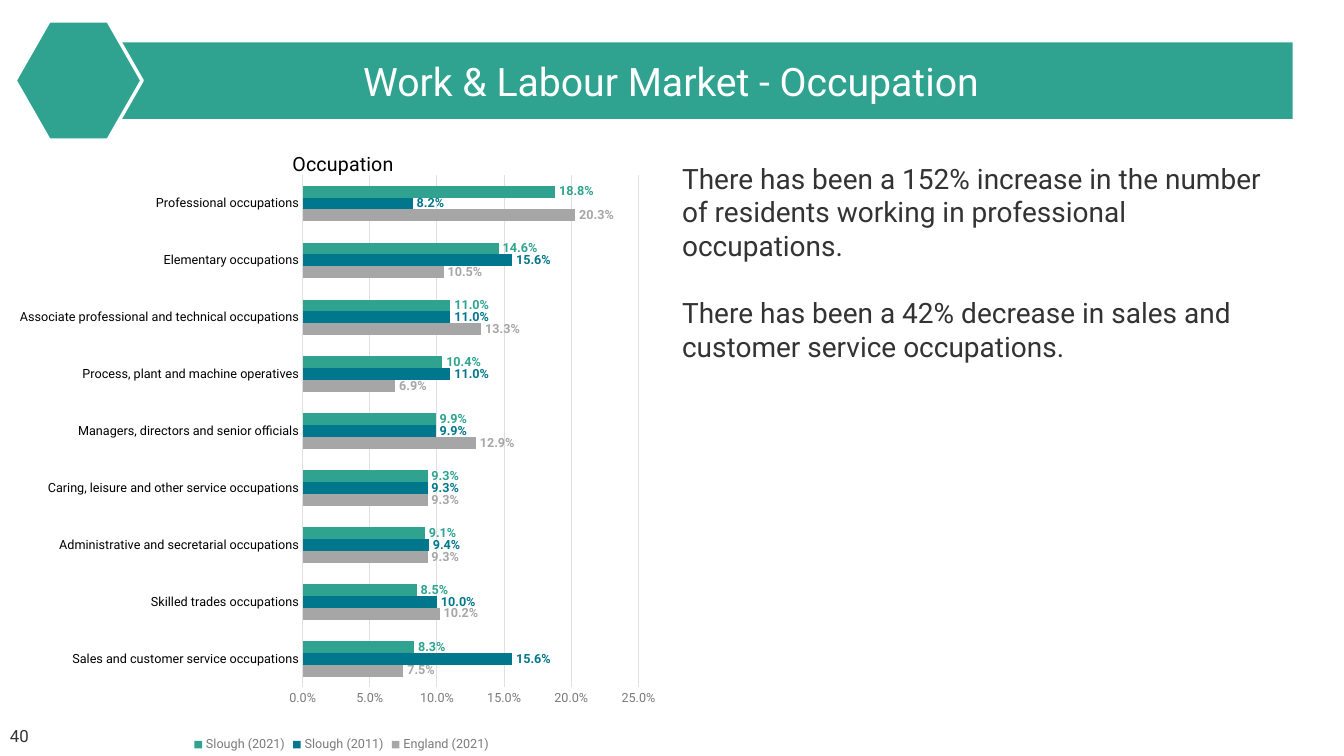
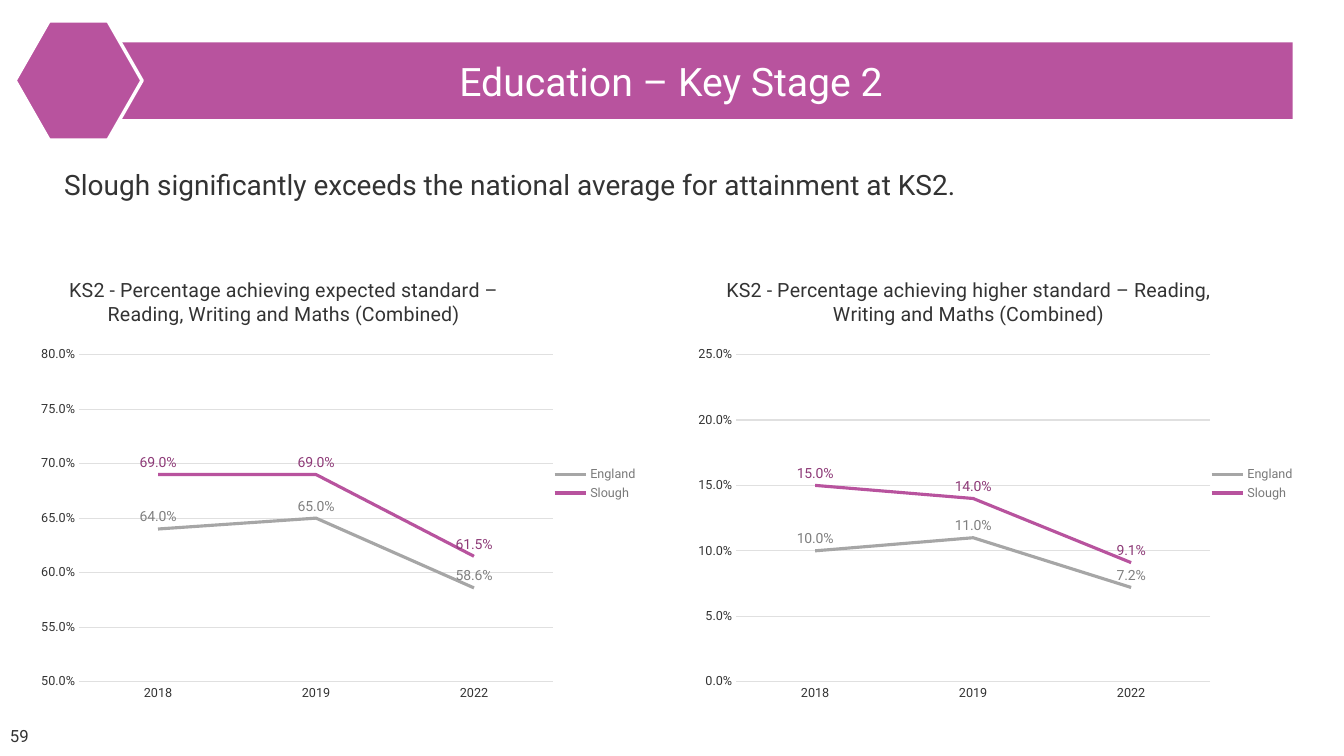
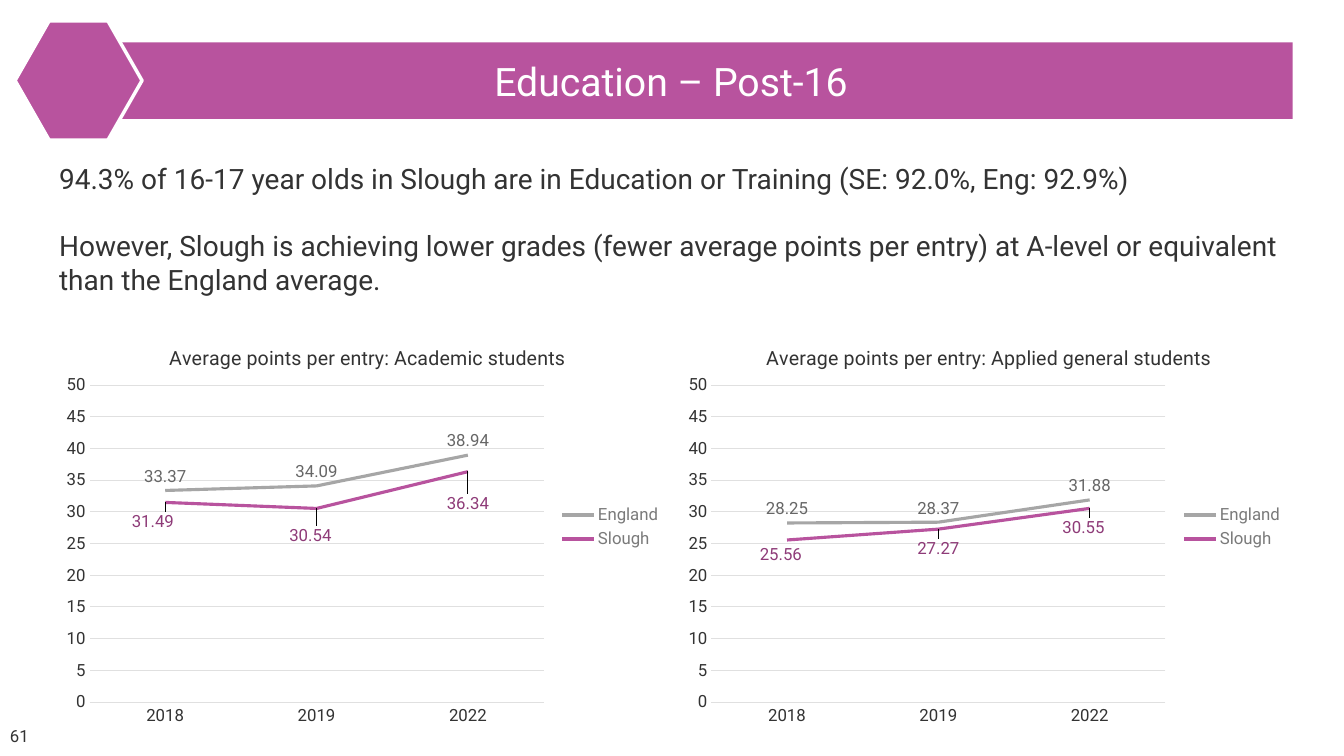
"""Build three banner slides with charts on occupation and education."""
from lxml import etree
from pptx import Presentation
from pptx.chart.data import CategoryChartData
from pptx.dml.color import RGBColor
from pptx.enum.chart import XL_CHART_TYPE, XL_LABEL_POSITION, XL_LEGEND_POSITION, XL_TICK_MARK
from pptx.enum.shapes import MSO_SHAPE
from pptx.enum.text import MSO_ANCHOR, PP_ALIGN
from pptx.oxml.ns import qn
from pptx.util import Cm, Pt

BAR, LINE = XL_CHART_TYPE.BAR_CLUSTERED, XL_CHART_TYPE.LINE
OUTSIDE, ABOVE = XL_LABEL_POSITION.OUTSIDE_END, XL_LABEL_POSITION.ABOVE
BOTTOM, RIGHT = XL_LEGEND_POSITION.BOTTOM, XL_LEGEND_POSITION.RIGHT
NO_TICK = XL_TICK_MARK.NONE
RECTANGLE, HEXAGON = MSO_SHAPE.RECTANGLE, MSO_SHAPE.HEXAGON
TOP, MIDDLE = MSO_ANCHOR.TOP, MSO_ANCHOR.MIDDLE
LEFT, CENTER = PP_ALIGN.LEFT, PP_ALIGN.CENTER

FONT = "Roboto"
COLORS = {
    "green": "2FA390", "teal": "00778C", "purple": "B8539E", "plum": "8E3B78",
    "gray": "A6A6A6", "mid": "808080", "dark": "666666", "legend": "7A7A7A",
    "grid": "E0E0E0", "text": "333333", "black": "000000", "white": "FFFFFF",
}
YEARS = ["2018", "2019", "2022"]
OCCUPATIONS = [
    "Sales and customer service occupations",
    "Skilled trades occupations",
    "Administrative and secretarial occupations",
    "Caring, leisure and other service occupations",
    "Managers, directors and senior officials",
    "Process, plant and machine operatives",
    "Associate professional and technical occupations",
    "Elementary occupations",
    "Professional occupations",
]
OCCUPATION_STYLE = {
    "kind": BAR, "categories": OCCUPATIONS, "scale": (0, 0.25, 0.05),
    "format": "0.0%", "label_format": "0.0%", "axis_size": 9, "label_size": 9,
    "axis_colors": ("black", "legend"), "title_color": "black",
    "legend": BOTTOM, "label_position": OUTSIDE, "bold": True,
    "plot": (0.441, 0.085, 0.508, 0.807),
    "colors": [("gray", "gray"), ("teal", "teal"), ("green", "green")],
}
STAGE_STYLE = {
    "kind": LINE, "categories": YEARS, "format": "0.0%", "label_format": "0.0%",
    "axis_size": 9, "label_size": 10, "axis_colors": ("text", "text"),
    "title_color": "text", "legend": RIGHT, "label_position": ABOVE, "bold": False,
    "plot": (0.101, 0.219, 0.749, 0.712), "title_at": (0.08, 0.04),
    "colors": [("gray", "mid"), ("purple", "plum")],
}
POINTS_STYLE = STAGE_STYLE | {
    "scale": (0, 50, 5), "format": "0", "label_format": "0.00",
    "axis_size": 12, "label_size": 12, "plot": (0.057, 0.158, 0.735, 0.764),
    "colors": [("gray", "dark"), ("purple", "plum")],
}
SLIDES = [
    {
        "title": "Work & Labour Market - Occupation", "color": "green", "number": "40",
        "body": [
            "There has been a 152% increase in the number of residents working in "
            "professional occupations.",
            "There has been a 42% decrease in sales and customer service occupations.",
        ],
        "body_at": (16.94, 3.94, 15.67, 4.52),
        "style": OCCUPATION_STYLE,
        "chart_lefts": [0.28], "chart_frame": (3.05, 16.66, 16),
        "charts": [{
            "title": "Occupation", "title_at": (0.42, 0.04),
            "series": {
                "England (2021)": [0.075, 0.102, 0.093, 0.093, 0.129, 0.069, 0.133, 0.105, 0.203],
                "Slough (2011)": [0.156, 0.1, 0.094, 0.093, 0.099, 0.11, 0.11, 0.156, 0.082],
                "Slough (2021)": [0.083, 0.085, 0.091, 0.093, 0.099, 0.104, 0.11, 0.146, 0.188],
            },
        }],
    },
    {
        "title": "Education – Key Stage 2", "color": "purple", "number": "59",
        "body": ["Slough significantly exceeds the national average for attainment at KS2."],
        "body_at": (1.37, 4.09, 31.24, 1.12),
        "style": STAGE_STYLE,
        "chart_lefts": [0.38, 16.94], "chart_frame": (6.4, 15.95, 11.58),
        "charts": [
            {
                "title": "KS2 - Percentage achieving expected standard – "
                         "Reading, Writing and Maths (Combined)",
                "scale": (0.5, 0.8, 0.05),
                "series": {"England": [0.64, 0.65, 0.586], "Slough": [0.69, 0.69, 0.615]},
            },
            {
                "title": "KS2 - Percentage achieving higher standard – "
                         "Reading, Writing and Maths (Combined)",
                "scale": (0, 0.25, 0.05),
                "series": {"England": [0.1, 0.11, 0.072], "Slough": [0.15, 0.14, 0.091]},
            },
        ],
    },
    {
        "title": "Education – Post-16", "color": "purple", "number": "61",
        "body": [
            "94.3% of 16-17 year olds in Slough are in Education or Training "
            "(SE: 92.0%, Eng: 92.9%)",
            "However, Slough is achieving lower grades (fewer average points per entry) "
            "at A-level or equivalent than the England average.",
        ],
        "body_at": (1.24, 3.94, 31.24, 3.68),
        "style": POINTS_STYLE,
        "chart_lefts": [1.37, 17.04], "chart_frame": (8.05, 15.57, 10.46),
        "charts": [
            {
                "title": "Average points per entry: Academic students",
                "title_at": (0.18, 0.05),
                "series": {"England": [33.37, 34.09, 38.94], "Slough": [31.49, 30.54, 36.34]},
                "label_shifts": {"Slough": [(-0.02, 0.08), (-0.01, 0.1), (0, 0.11)]},
            },
            {
                "title": "Average points per entry: Applied general students",
                "title_at": (0.14, 0.05),
                "series": {"England": [28.25, 28.37, 31.88], "Slough": [25.56, 27.27, 30.55]},
                "label_shifts": {"Slough": [(-0.01, 0.07), (0, 0.08), (-0.01, 0.08)]},
            },
        ],
    },
]


def rgb(name):
    return RGBColor.from_string(COLORS[name])


def lengths(values):
    return [Cm(value) for value in values]


def style_font(font, size, color, bold=False):
    font.name, font.size, font.bold = FONT, Pt(size), bold
    font.color.rgb = rgb(color)


def write_text(frame, paragraphs, size, color="text", align=LEFT, anchor=TOP, gap=0):
    frame.word_wrap = True
    frame.vertical_anchor = anchor
    for index, text in enumerate(paragraphs):
        para = frame.paragraphs[0] if index == 0 else frame.add_paragraph()
        para.alignment = align
        if index:
            para.space_before = Pt(gap)
        span = para.add_run()
        span.text = text
        style_font(span.font, size, color)


def add_text(page, frame, paragraphs, size, **options):
    box = page.shapes.add_textbox(*lengths(frame))
    write_text(box.text_frame, paragraphs, size, **options)


def add_filled(page, preset, frame, color):
    shape = page.shapes.add_shape(preset, *lengths(frame))
    shape.shadow.inherit = False
    shape.fill.solid()
    shape.fill.fore_color.rgb = rgb(color)
    shape.line.fill.background()
    return shape


def manual_layout(parent, place, **settings):
    for old in parent.findall(qn("c:layout")):
        parent.remove(old)
    layout = etree.Element(qn("c:layout"))
    manual = etree.SubElement(layout, qn("c:manualLayout"))
    settings |= dict(zip("xywh", place))
    for tag, value in settings.items():
        etree.SubElement(manual, qn(f"c:{tag}")).set("val", str(value))
    return layout


def style_title(chart, spec):
    chart.has_title = True
    title = chart.chart_title
    write_text(title.text_frame, [spec["title"]], 14, spec["title_color"], CENTER)
    element = title._element
    layout = manual_layout(element, spec["title_at"], xMode="edge", yMode="edge")
    element.find(qn("c:tx")).addnext(layout)


def style_axes(chart, spec):
    axes = (chart.category_axis, chart.value_axis)
    for axis, color in zip(axes, spec["axis_colors"]):
        axis.major_tick_mark = axis.minor_tick_mark = NO_TICK
        style_font(axis.tick_labels.font, spec["axis_size"], color)
    category, value = axes
    value.has_major_gridlines = True
    value.format.line.fill.background()
    for line in (category.format.line, value.major_gridlines.format.line):
        line.color.rgb = rgb("grid")
        line.width = Pt(0.75)
    value.minimum_scale, value.maximum_scale, value.major_unit = spec["scale"]
    value.tick_labels.number_format = spec["format"]
    value.tick_labels.number_format_is_linked = False


def style_series(series, spec, color, label_color):
    if spec["kind"] == LINE:
        series.smooth = False
        series.format.line.color.rgb = rgb(color)
        series.format.line.width = Pt(2.25)
    else:
        series.format.fill.solid()
        series.format.fill.fore_color.rgb = rgb(color)
    labels = series.data_labels
    labels.show_value = True
    labels.position = spec["label_position"]
    labels.number_format = spec["label_format"]
    labels.number_format_is_linked = False
    style_font(labels.font, spec["label_size"], label_color, spec["bold"])
    shifts = spec.get("label_shifts", {}).get(series.name, [])
    for index, _ in enumerate(shifts):
        label = series.points[index].data_label
        style_font(label.font, spec["label_size"], label_color)
        label.position = spec["label_position"]
    for element, shift in zip(series._element.iter(qn("c:dLbl")), shifts):
        element.find(qn("c:idx")).addnext(manual_layout(element, shift))


def add_chart(page, frame, spec):
    data = CategoryChartData(number_format=spec["label_format"])
    data.categories = spec["categories"]
    for name, values in spec["series"].items():
        data.add_series(name, values)
    chart = page.shapes.add_chart(spec["kind"], *lengths(frame), data).chart
    style_font(chart.font, 10, "text")
    style_title(chart, spec)
    style_axes(chart, spec)
    chart.has_legend = True
    chart.legend.position = spec["legend"]
    chart.legend.include_in_layout = False
    style_font(chart.legend.font, 12 if spec["axis_size"] == 12 else 9, "legend")
    plot = chart.plots[0]
    plot.vary_by_categories = False
    if spec["kind"] == BAR:
        plot.gap_width = 182
    for series, colors in zip(plot.series, spec["colors"]):
        style_series(series, spec, *colors)
    area = chart._chartSpace.find(f".//{qn('c:plotArea')}")
    area.insert(0, manual_layout(area, spec["plot"], layoutTarget="inner",
                                 xMode="edge", yMode="edge"))


def add_banner(page, title, color, number):
    band = add_filled(page, RECTANGLE, (1.24, 1.07, 31.34, 1.93), color)
    write_text(band.text_frame, [title], 28, "white", CENTER, MIDDLE)
    badge = add_filled(page, HEXAGON, (0.38, 0.53, 3.2, 3), color)
    badge.adjustments[0] = 0.286
    badge.line.color.rgb = rgb("white")
    badge.line.width = Pt(2.5)
    add_text(page, (0, 18.03, 7.62, 1.02), [number], 12, anchor=MIDDLE)


def main():
    deck = Presentation()
    deck.slide_width, deck.slide_height = Cm(33.87), Cm(19.05)
    for content in SLIDES:
        page = deck.slides.add_slide(deck.slide_layouts[6])
        add_banner(page, content["title"], content["color"], content["number"])
        add_text(page, content["body_at"], content["body"], 20, gap=24)
        for left, chart in zip(content["chart_lefts"], content["charts"]):
            add_chart(page, (left, *content["chart_frame"]), content["style"] | chart)
    deck.save("out.pptx")


if __name__ == "__main__":
    main()
